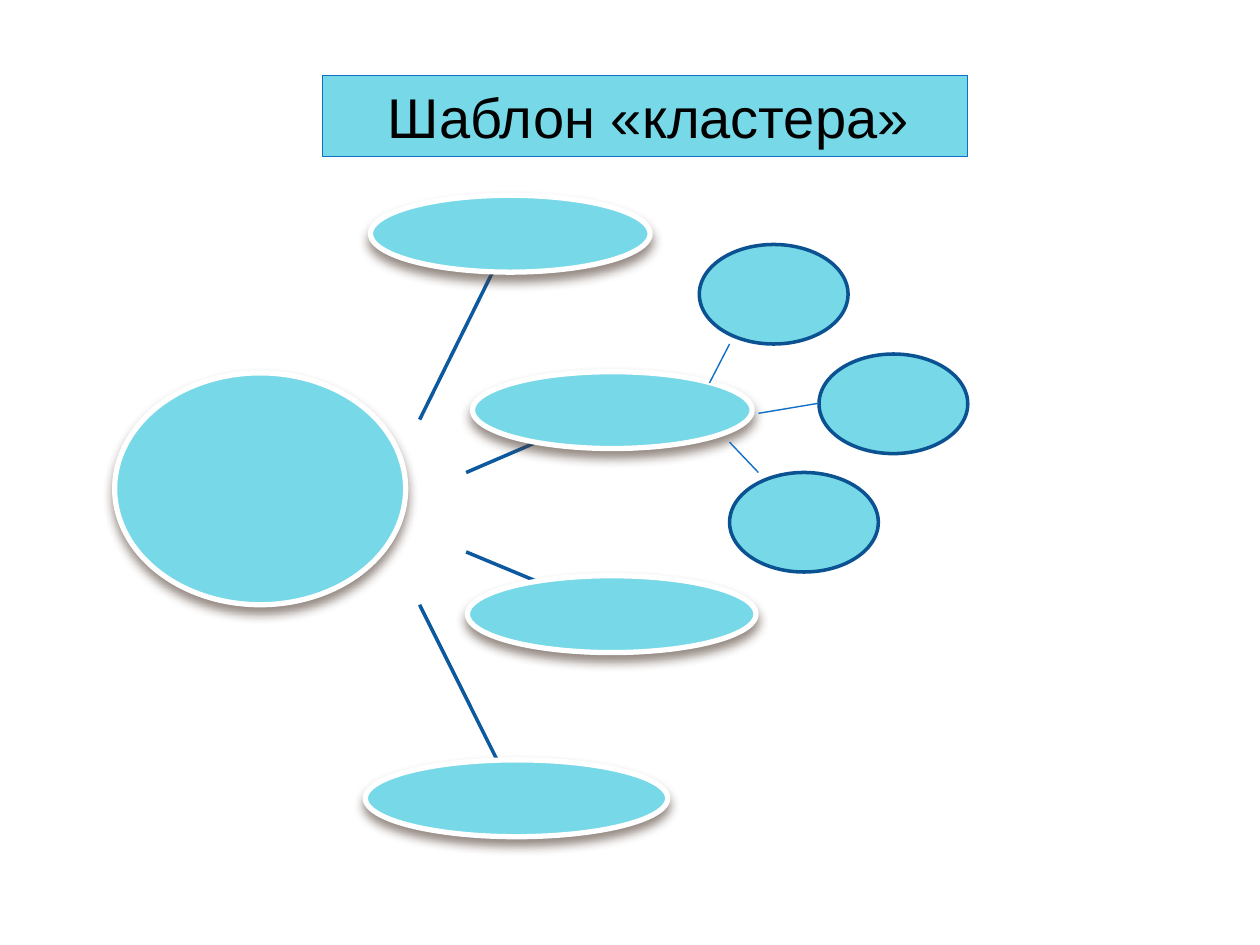
from typing import NamedTuple, Optional

from lxml.etree import SubElement
from pptx import Presentation
from pptx.dml.color import RGBColor
from pptx.enum.shapes import MSO_CONNECTOR, MSO_SHAPE
from pptx.enum.text import MSO_ANCHOR, PP_ALIGN
from pptx.oxml import parse_xml
from pptx.oxml.ns import nsdecls, qn
from pptx.util import Pt

AQUA = RGBColor(0x77, 0xD9, 0xE8)
BLUE = RGBColor(0x0F, 0x6F, 0xC6)
SPOKE_BLUE = RGBColor(0x0C, 0x59, 0x9F)
NAVY = RGBColor(0x0B, 0x52, 0x92)
WHITE = RGBColor(0xFF, 0xFF, 0xFF)
BLACK = RGBColor(0, 0, 0)

SHADOW = (
    f'<a:effectLst {nsdecls("a")}>'
    f'<a:outerShdw blurRad="{Pt(6)}" dist="{Pt(4)}" dir="5400000" rotWithShape="0">'
    '<a:srgbClr val="4E3B30"><a:alpha val="60000"/></a:srgbClr>'
    '</a:outerShdw></a:effectLst>'
)


class Oval(NamedTuple):
    left: float
    top: float
    width: float
    height: float


class Link(NamedTuple):
    x1: float
    y1: float
    x2: float
    y2: float


BRANCH_H = 43.9
CENTRE = Oval(65.5, 213.1, 166.3, 132.5)
BRANCHES = [
    Oval(211.7, 111.6, 159.8, BRANCH_H),
    Oval(270, 212.4, 159.8, BRANCH_H),
    Oval(267.1, 329, 164.9, BRANCH_H),
    Oval(208.8, 434.2, 172.8, BRANCH_H),
]
LEAVES = [Oval(x, y, 85, 56.9) for x, y in [(399.6, 139.7), (468, 202.3), (416.9, 270)]]

SPOKES = [
    Link(239.8, 345.6, 284.4, 434.9),
    Link(266.4, 315.4, 306, 331.9),
    Link(266.4, 270, 306.7, 252.7),
    Link(239.8, 239.8, 281.5, 155.5),
]
TWIGS = [
    Link(405.4, 218.9, 416.9, 196.6),
    Link(433.4, 236.2, 468, 230.4),
    Link(416.9, 252.7, 433.4, 270),
]


def add_link(slide, link: Link, color: RGBColor, width: float) -> None:
    line = slide.shapes.add_connector(MSO_CONNECTOR.STRAIGHT, *map(Pt, link))
    line.line.color.rgb = color
    line.line.width = Pt(width)
    SubElement(line._element.spPr, qn("a:effectLst"))


def add_oval(slide, oval: Oval, color: RGBColor, width: float,
             shadow: Optional[str] = None) -> None:
    sp = slide.shapes.add_shape(MSO_SHAPE.OVAL, *map(Pt, oval))
    sp.fill.solid()
    sp.fill.fore_color.rgb = AQUA
    sp.line.color.rgb = color
    sp.line.width = Pt(width)
    if shadow:
        sp._element.spPr.append(parse_xml(shadow))
    else:
        sp.shadow.inherit = False


def add_title(slide) -> None:
    sp = slide.shapes.title
    sp.left, sp.top, sp.width, sp.height = map(Pt, (184.3, 43.2, 368.6, 46.1))
    sp.fill.solid()
    sp.fill.fore_color.rgb = AQUA
    sp.line.color.rgb = BLUE
    sp.line.width = Pt(0.75)
    tf = sp.text_frame
    tf.word_wrap = True
    tf.vertical_anchor = MSO_ANCHOR.MIDDLE
    p = tf.paragraphs[0]
    p.alignment = PP_ALIGN.CENTER
    for text, size, font in [(" ", 18, "Cabin"), ("Шаблон «кластера»", 32, "Arial")]:
        r = p.add_run()
        r.text = text
        r.font.size = Pt(size)
        r.font.name = font
        r.font.color.rgb = BLACK


def main() -> None:
    prs = Presentation()
    prs.slide_width, prs.slide_height = Pt(720), Pt(540)
    slide = prs.slides.add_slide(prs.slide_layouts[5])
    add_title(slide)
    for spoke in SPOKES:
        add_link(slide, spoke, SPOKE_BLUE, 2)
    for oval in [CENTRE, *BRANCHES]:
        add_oval(slide, oval, WHITE, 3, SHADOW)
    for leaf in LEAVES:
        add_oval(slide, leaf, NAVY, 2)
    for twig in TWIGS:
        add_link(slide, twig, BLUE, 0.79)
    prs.save("out.pptx")


if __name__ == "__main__":
    main()
